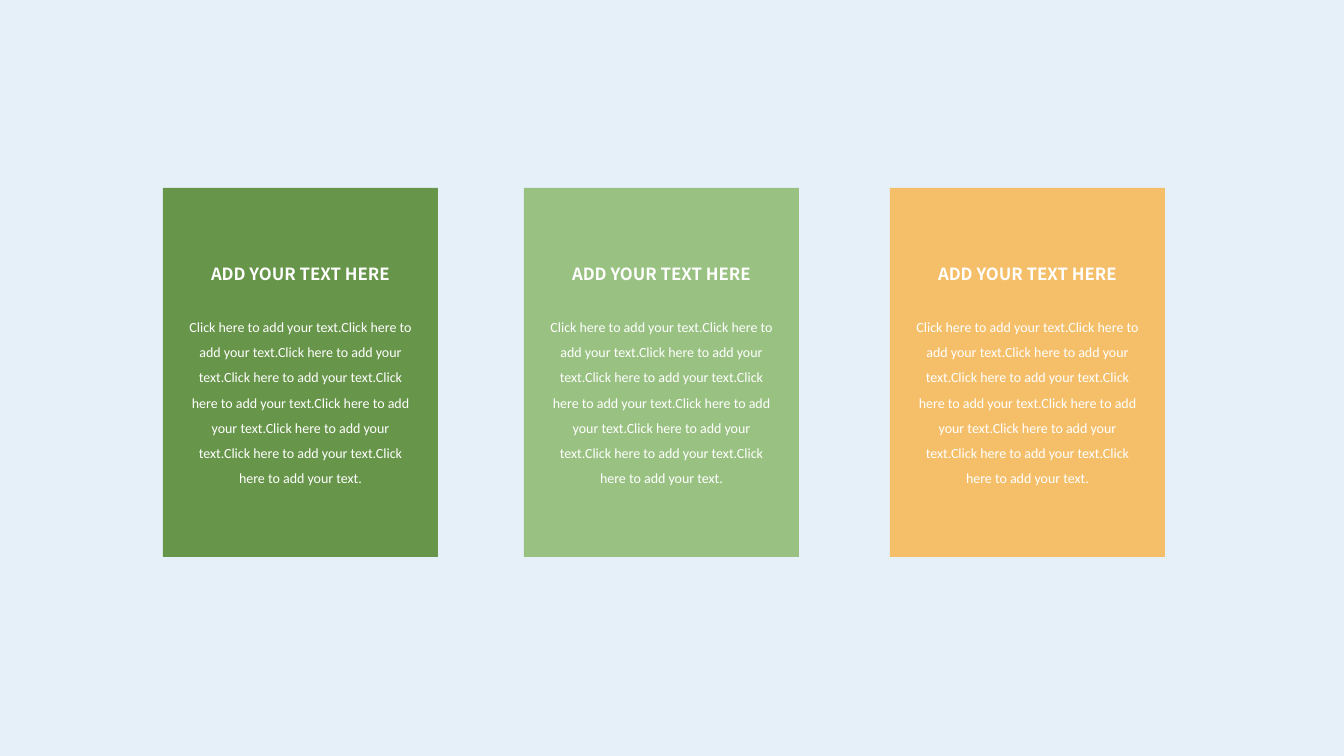
from dataclasses import dataclass

from pptx import Presentation
from pptx.dml.color import RGBColor
from pptx.enum.shapes import MSO_SHAPE
from pptx.enum.text import MSO_AUTO_SIZE, PP_ALIGN
from pptx.slide import Slide
from pptx.util import Emu, Pt

PX_PER_INCH = 100.8
CARD_TOP, CARD_W, CARD_H = 188, 275, 369
HEADING_TOP, HEADING_H = 259, 31
BODY_TOP, BODY_H, BODY_INSET = 305, 212, 14
WHITE = "FFFFFF"
HEADING = "ADD YOUR TEXT HERE"
BODY = "Click here to add your text." * 9


@dataclass(frozen=True)
class Card:
    left: int
    fill: str


@dataclass(frozen=True)
class TextStyle:
    font: str
    size: int
    bold: bool
    line_spacing: float


CARDS = [Card(163, "679549"), Card(524, "99C282"), Card(890, "F5BF6A")]
HEADING_STYLE = TextStyle("Noto Sans CJK SC", 12, True, 1.0)
BODY_STYLE = TextStyle("Calibri", 10, False, 1.5)


def px(n: int) -> Emu:
    return Emu(round(n * 914400 / PX_PER_INCH))


def rgb(color: str) -> RGBColor:
    return RGBColor.from_string(color)


def add_panel(s: Slide, card: Card) -> None:
    sp = s.shapes.add_shape(MSO_SHAPE.RECTANGLE, px(card.left), px(CARD_TOP),
                            px(CARD_W), px(CARD_H))
    sp.shadow.inherit = False
    sp.fill.solid()
    sp.fill.fore_color.rgb = rgb(card.fill)
    sp.line.fill.background()


def add_text(s: Slide, text: str, left: int, top: int, width: int, height: int,
             style: TextStyle) -> None:
    sp = s.shapes.add_textbox(px(left), px(top), px(width), px(height))
    tf = sp.text_frame
    tf.word_wrap = True
    tf.auto_size = MSO_AUTO_SIZE.SHAPE_TO_FIT_TEXT
    p = tf.paragraphs[0]
    p.alignment = PP_ALIGN.CENTER
    p.line_spacing = style.line_spacing
    r = p.add_run()
    r.text = text
    r.font.name = style.font
    r.font.size = Pt(style.size)
    r.font.bold = style.bold
    r.font.color.rgb = rgb(WHITE)


def main() -> None:
    prs = Presentation()
    prs.slide_width, prs.slide_height = px(1344), px(756)
    s = prs.slides.add_slide(prs.slide_layouts[6])

    # Background
    s.background.fill.solid()
    s.background.fill.fore_color.rgb = rgb("E6F0F9")

    # Coloured panels
    for card in CARDS:
        add_panel(s, card)

    # Heading and body of each card
    for card in CARDS:
        add_text(s, HEADING, card.left, HEADING_TOP, CARD_W, HEADING_H, HEADING_STYLE)
        add_text(s, BODY, card.left + BODY_INSET, BODY_TOP,
                 CARD_W - 2 * BODY_INSET, BODY_H, BODY_STYLE)

    prs.save("out.pptx")


if __name__ == "__main__":
    main()
